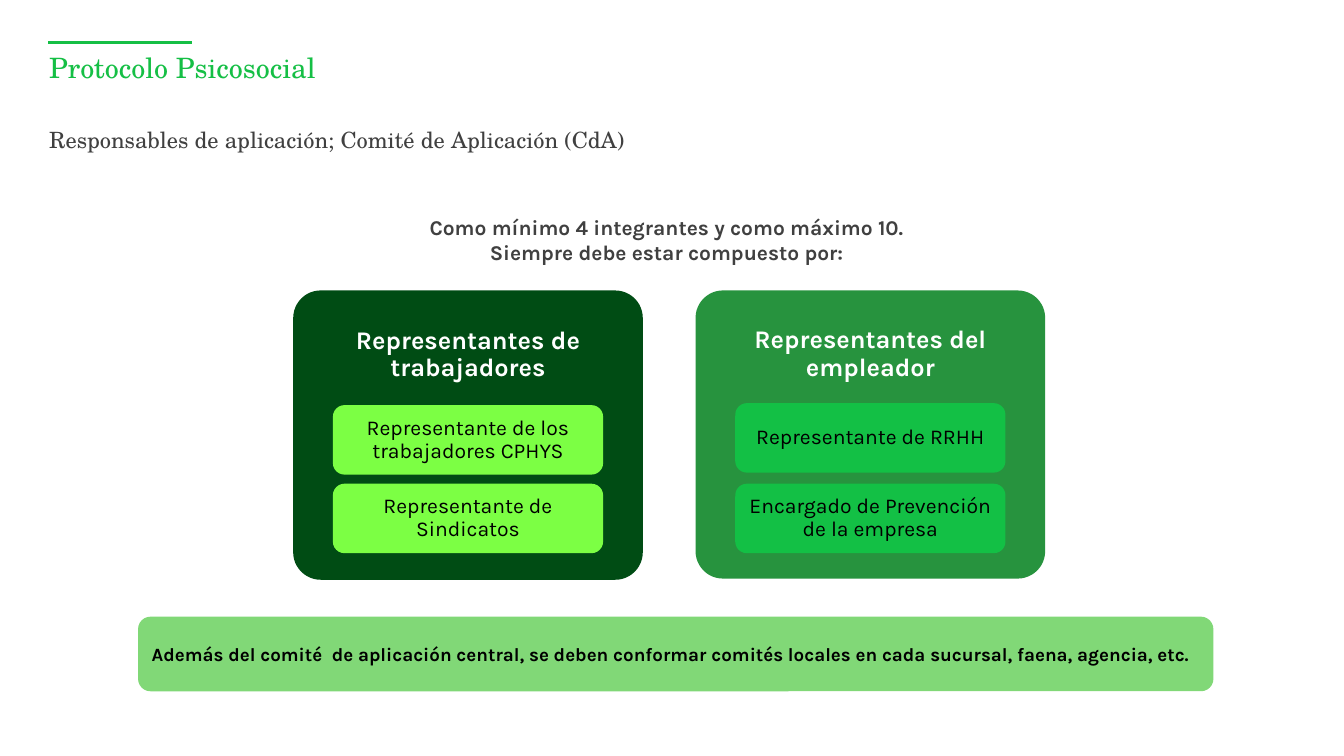
from pptx import Presentation
from pptx.dml.color import RGBColor
from pptx.enum.shapes import MSO_CONNECTOR as Connector, MSO_SHAPE as Shape
from pptx.enum.text import MSO_ANCHOR as Anchor, MSO_AUTO_SIZE as AutoSize, PP_ALIGN as Align
from pptx.oxml.ns import qn
from pptx.util import Cm, Pt

# Content
TITLE = "Protocolo Psicosocial"
SUBTITLE = "Responsables de aplicación; Comité de Aplicación (CdA)"
INTRO = [
    "Como mínimo 4 integrantes y como máximo 10.",
    "Siempre debe estar compuesto por:",
]
# Lengths in cm: left edge, height, top of the first member box
GROUPS = [
    {
        "heading": "Representantes de trabajadores",
        "members": ["Representante de los trabajadores CPHYS", "Representante de Sindicatos"],
        "panel": "dark", "box": "lime",
        "left": 7.39, "height": 7.29, "first_top": 10.21,
    },
    {
        "heading": "Representantes del empleador",
        "members": ["Representante de RRHH", "Encargado de Prevención de la empresa"],
        "panel": "medium", "box": "bright",
        "left": 17.53, "height": 7.26, "first_top": 10.16,
    },
]
NOTE = ("Además del comité  de aplicación central, se deben conformar comités locales "
        "en cada sucursal, faena, agencia, etc.")

COLORS = {
    "accent": "15BF45", "gray": "404040", "black": "000000", "white": "FFFFFF",
    "dark": "004C14", "medium": "27933E", "lime": "7CFF44", "bright": "13C045",
    "pale": "81D877",
}
SANS, SERIF = "Karla", "TeX Gyre Schola"
PANEL_TOP, PANEL_WIDTH = 7.32, 8.81
BOX_WIDTH, BOX_HEIGHT, LAST_TOP = 6.81, 1.75, 12.19


def color(name):
    return RGBColor.from_string(COLORS[name])


def write(shape, lines, size, ink, font=SANS, bold=False, align=Align.CENTER,
          anchor=Anchor.MIDDLE, margins=(0.25, 0.13, 0.25, 0.13), spacing=0.9):
    frame = shape.text_frame
    frame.word_wrap = True
    frame.auto_size = AutoSize.NONE
    frame.vertical_anchor = anchor
    (frame.margin_left, frame.margin_top,
     frame.margin_right, frame.margin_bottom) = map(Cm, margins)
    frame.text = "\n".join(lines)
    for para in frame.paragraphs:
        para.alignment = align
        para.line_spacing = spacing
        para.space_before = Pt(0)
        para.font.name = font
        para.font.size = Pt(size)
        para.font.bold = bold
        para.font.color.rgb = color(ink)


def add_rounded(left, top, width, height, fill, corner=0.1667):
    shape = page.shapes.add_shape(
        Shape.ROUNDED_RECTANGLE, Cm(left), Cm(top), Cm(width), Cm(height))
    shape.adjustments[0] = corner
    shape.shadow.inherit = False
    shape.fill.solid()
    shape.fill.fore_color.rgb = color(fill)
    shape.line.fill.background()
    return shape


def place_heading(holder, text, top, height, size, ink):
    holder.left, holder.top = Cm(1.24), Cm(top)
    holder.width, holder.height = Cm(27.41), Cm(height)
    write(holder, [text], size, ink, SERIF, align=Align.LEFT,
          anchor=Anchor.TOP, margins=(0, 0, 0, 0))


deck = Presentation()
deck.slide_width, deck.slide_height = Cm(33.87), Cm(19.05)
page = deck.slides.add_slide(deck.slide_layouts[1])

# Title and subtitle under a short rule
rule = page.shapes.add_connector(Connector.STRAIGHT, Cm(1.22), Cm(1.07), Cm(4.83), Cm(1.07))
rule.line.color.rgb = color("accent")
rule.line.width = Pt(1.75)
properties = rule._element.spPr
properties.append(properties.makeelement(qn("a:effectLst"), {}))

place_heading(page.shapes.title, TITLE, 1.37, 1.45, 20, "accent")
subtitle = page.placeholders[1]
place_heading(subtitle, SUBTITLE, 3.25, 0.99, 16, "gray")
bullet = subtitle.text_frame.paragraphs[0]._p.get_or_add_pPr()
bullet.set("marL", "0")
bullet.set("indent", "0")
bullet.insert_element_before(bullet.makeelement(qn("a:buNone"), {}),
                             "a:tabLst", "a:defRPr", "a:extLst")

# Introduction
intro = page.shapes.add_textbox(Cm(8.75), Cm(5.28), Cm(16.1), Cm(1.55))
write(intro, INTRO, 15, "gray", bold=True, anchor=Anchor.TOP, spacing=1.0)

# Two panels, each with its member boxes
for group in GROUPS:
    panel = add_rounded(group["left"], PANEL_TOP, PANEL_WIDTH, group["height"],
                        group["panel"], corner=0.095)
    write(panel, [group["heading"]], 18.1, "white", bold=True,
          margins=(0.15, 0.15, 0.15, 4.19))
    box_left = group["left"] + (PANEL_WIDTH - BOX_WIDTH) / 2
    for top, member in zip((group["first_top"], LAST_TOP), group["members"]):
        box = add_rounded(box_left, top, BOX_WIDTH, BOX_HEIGHT, group["box"])
        write(box, [member], 15.1, "black", margins=(0.13, 0.1, 0.13, 0.1))

# Closing note
note = add_rounded(3.48, 15.54, 27.1, 1.88, "pale")
write(note, [NOTE], 13.4, "black", bold=True, align=Align.JUSTIFY, spacing=1.0)

deck.save("out.pptx")
